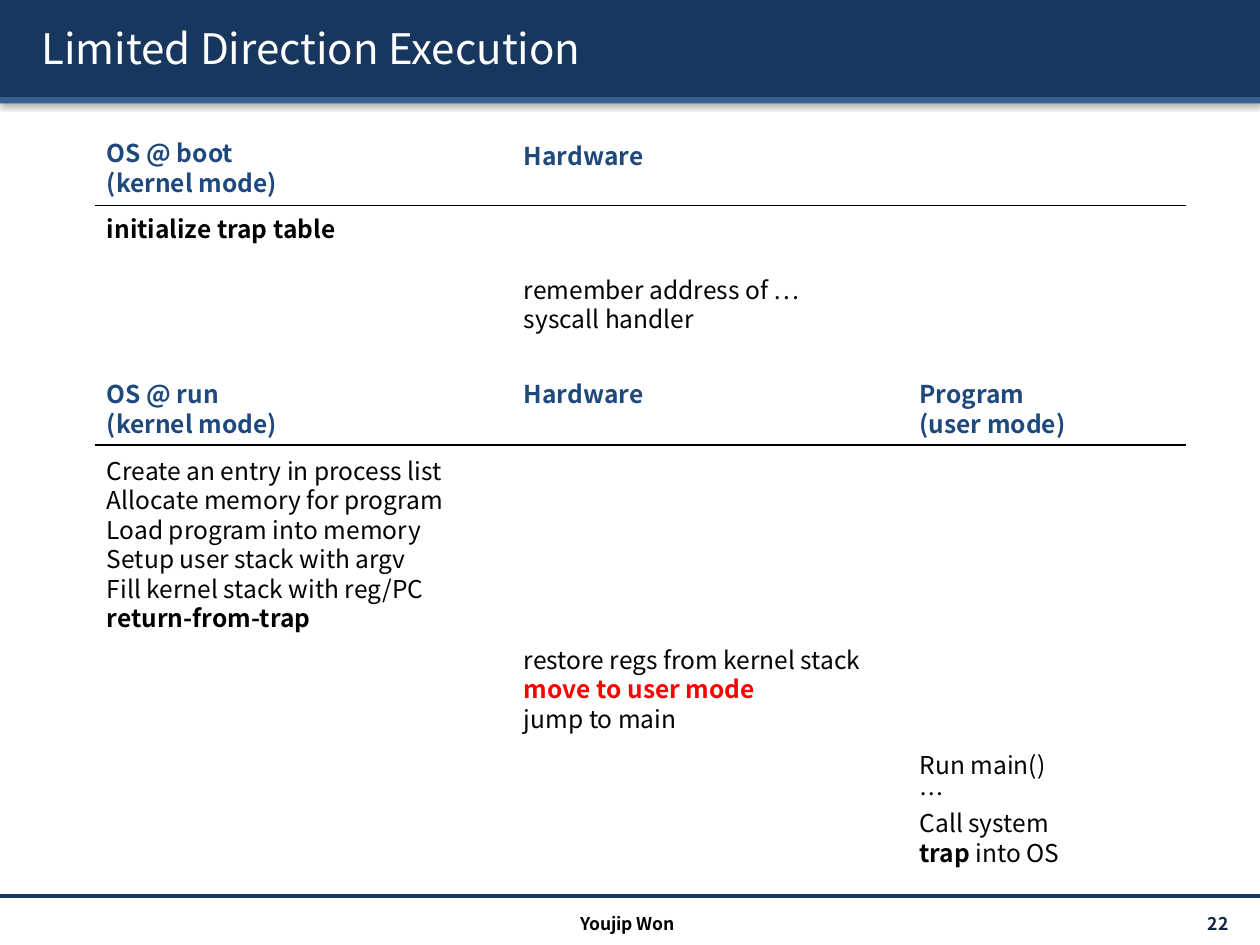
from dataclasses import dataclass

from lxml.etree import SubElement
from pptx import Presentation
from pptx.dml.color import RGBColor as Color
from pptx.enum.shapes import MSO_CONNECTOR as Connector, MSO_SHAPE as Shape
from pptx.enum.text import MSO_ANCHOR as Anchor, PP_ALIGN as Align
from pptx.oxml import parse_xml
from pptx.oxml.ns import nsdecls, qn
from pptx.util import Inches, Pt


@dataclass(frozen=True)
class Theme:
    font: str = "Noto Sans CJK KR"
    navy: str = "17375E"
    band: str = "376092"
    heading: str = "1F497D"
    number: str = "0F243E"
    ink: str = "000000"
    alert: str = "FF0000"
    white: str = "FFFFFF"
    title_size: int = 24
    body_size: int = 14
    footer_size: int = 10
    leading: float = 1.2


THEME = Theme()
WIDTH, HEIGHT = Inches(10), Inches(7.5)
COLUMNS, ROWS = 100, 75
OS, HARDWARE, PROGRAM = 7.5, 40.6, 72  # left edges of the three columns
RULE_END = 94.1

HEADING = {"color": THEME.heading, "bold": True}
STRONG = {"bold": True}
ALERT = {"bold": True, "color": THEME.alert}


def shadow_effect(blur, distance, opacity):
    return parse_xml(
        f'<a:effectLst {nsdecls("a")}><a:outerShdw blurRad="{Pt(blur)}" '
        f'dist="{Pt(distance)}" dir="5400000" algn="t" rotWithShape="0">'
        f'<a:srgbClr val="{THEME.ink}"><a:alpha val="{opacity * 1000}"/>'
        f'</a:srgbClr></a:outerShdw></a:effectLst>')


class SlideBuilder:
    def __init__(self, presentation, theme):
        self.theme = theme
        self.slide = presentation.slides.add_slide(presentation.slide_layouts[6])

    def place(self, left, top, width, height):
        """Turn grid columns and rows into slide lengths."""
        x, y = WIDTH / COLUMNS, HEIGHT / ROWS
        return [round(v) for v in (left * x, top * y, width * x, height * y)]

    def bar(self, top, height, color):
        shape = self.slide.shapes.add_shape(
            Shape.RECTANGLE, *self.place(0, top, COLUMNS, height))
        shape.shadow.inherit = False
        shape.fill.solid()
        shape.fill.fore_color.rgb = Color.from_string(color)
        shape.line.fill.background()
        properties = shape._element.spPr
        properties.replace(properties.find(qn("a:effectLst")),
                           shadow_effect(3.1, 1.6, 38))

    def rule(self, left, right, row, color, weight):
        line = self.slide.shapes.add_connector(
            Connector.STRAIGHT, *self.place(left, row, right, row))
        line.line.color.rgb = Color.from_string(color)
        line.line.width = Pt(weight)
        SubElement(line._element.spPr, qn("a:effectLst"))

    def run(self, paragraph, text, size, color=THEME.ink, bold=False, shadow=False):
        run = paragraph.add_run()
        run.text = text
        values = {"size": Pt(size), "bold": bold, "name": self.theme.font}
        for name, value in values.items():
            setattr(run.font, name, value)
        run.font.color.rgb = Color.from_string(color)
        properties = run._r.rPr
        east_asian = SubElement(properties, qn("a:ea"), typeface=self.theme.font)
        properties.find(qn("a:latin")).addnext(east_asian)
        if shadow:
            properties.find(qn("a:solidFill")).addnext(shadow_effect(0, 1.5, 100))

    def text(self, box, lines, size=THEME.body_size, anchor=Anchor.TOP,
             align=Align.LEFT, **style):
        """Each line is a string or a list of (text, style) runs."""
        frame = self.slide.shapes.add_textbox(*self.place(*box)).text_frame
        frame.word_wrap = True
        frame.vertical_anchor = anchor
        for index, line in enumerate(lines):
            paragraph = frame.add_paragraph() if index else frame.paragraphs[0]
            paragraph.alignment = align
            paragraph.line_spacing = Pt(size * self.theme.leading)
            runs = [(line, {})] if isinstance(line, str) else line
            for words, changes in runs:
                self.run(paragraph, words, size, **{**style, **changes})

    def block(self, column, row, width, lines, **style):
        """A step or heading whose height follows its number of lines."""
        self.text((column, row, width, 1 + 2.35 * len(lines)), lines, **style)


def main():
    presentation = Presentation()
    presentation.slide_width, presentation.slide_height = WIDTH, HEIGHT
    builder = SlideBuilder(presentation, THEME)

    # Title band
    builder.bar(0, 7.7, THEME.navy)
    builder.bar(7.7, 0.5, THEME.band)
    builder.text((2.3, 0.6, 96.1, 6.4), ["Limited Direction Execution"],
                 size=THEME.title_size, anchor=Anchor.MIDDLE,
                 color=THEME.white, shadow=True)

    # Footer
    builder.rule(0, COLUMNS, 71.1, THEME.navy, 2)
    footer = {"size": THEME.footer_size, "bold": True}
    builder.text((33.2, 72, 33.2, 2.4), ["Youjip Won"], align=Align.CENTER, **footer)
    builder.text((87.1, 72.1, 11.7, 2.4), ["22 "], align=Align.RIGHT,
                 anchor=Anchor.MIDDLE, color=THEME.number, **footer)

    # Column headings
    for column, row, width, lines in (
            (OS, 10.5, 18.9, ["OS @ boot", "(kernel mode)"]),
            (HARDWARE, 10.7, 16.5, ["Hardware"]),
            (OS, 29.6, 18.9, ["OS @ run", "(kernel mode)"]),
            (HARDWARE, 29.6, 16.5, ["Hardware"]),
            (PROGRAM, 29.6, 16.5, ["Program", "(user mode)"])):
        builder.block(column, row, width, lines, **HEADING)
    for row in (16.3, 35.3):
        builder.rule(OS, RULE_END, row, THEME.ink, 1)

    # Steps at boot
    builder.block(OS, 16.5, 25.3, ["initialize trap table"], **STRONG)
    builder.block(HARDWARE, 21.3, 25.3,
                  ["remember address of …", "syscall handler"])

    # Steps at run
    builder.block(OS, 35.7, 29.9, [
        "Create an entry in process list",
        "Allocate memory for program",
        "Load program into memory",
        "Setup user stack with argv",
        "Fill kernel stack with reg/PC",
        [("return-from-trap", STRONG)]])
    builder.block(HARDWARE, 50.7, 29.9, [
        "restore regs from kernel stack",
        [("move to user mode", ALERT)],
        "jump to main"])
    builder.block(PROGRAM, 59, 25.2, [
        "Run main()", "…", "Call system",
        [("trap", STRONG), (" into OS", {})]])

    presentation.save("out.pptx")


if __name__ == "__main__":
    main()
